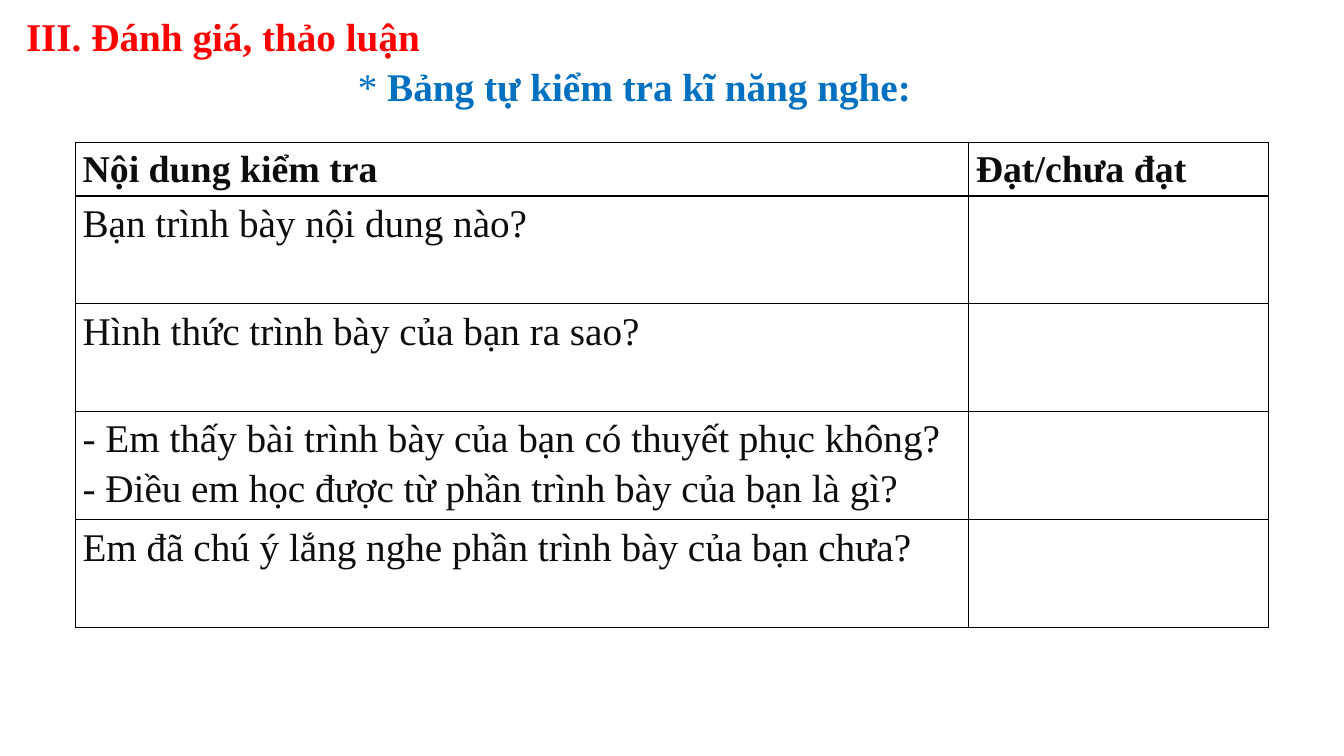
from lxml.etree import SubElement as Sub
from pptx import Presentation
from pptx.dml.color import RGBColor as Rgb
from pptx.enum.text import MSO_AUTO_SIZE as Auto, PP_ALIGN as Align
from pptx.oxml.ns import qn
from pptx.util import Pt

RED = Rgb(0xFF, 0x00, 0x00)
BLUE = Rgb(0x00, 0x70, 0xC0)
INK = Rgb(0x0D, 0x0D, 0x0D)
BLACK = Rgb(0x00, 0x00, 0x00)
FACE = "Times New Roman"
HEADS = ["Nội dung kiểm tra", "Đạt/chưa đạt"]
CHECKS = [
    ["Bạn trình bày nội dung nào?"],
    ["Hình thức trình bày của bạn ra sao?"],
    ["- Em thấy bài trình bày của bạn có thuyết phục không?",
     "- Điều em học được từ phần trình bày của bạn là gì?"],
    ["Em đã chú ý lắng nghe phần trình bày của bạn chưa?"],
]


def style(para, size, color, bold):
    """Set the font and line spacing of a paragraph."""
    para.line_spacing = 1.15
    font = para.font
    font.name, font.size, font.bold = FACE, Pt(size), bold
    font.color.rgb = color


def title(slide, box, parts, color):
    """Place a heading made of (text, bold) parts in the box."""
    frame = slide.shapes.add_textbox(*map(Pt, box)).text_frame
    frame.word_wrap = False
    frame.auto_size = Auto.SHAPE_TO_FIT_TEXT
    para = frame.paragraphs[0]
    style(para, 28, color, True)
    for text, bold in parts:
        run = para.add_run()
        run.text = text
        if not bold:
            run.font.bold = False


def frame_cell(cell):
    """Give a cell thin black borders, no fill and narrow margins."""
    cell.margin_left = cell.margin_right = Pt(5)
    cell.margin_top = cell.margin_bottom = 0
    props = cell._tc.get_or_add_tcPr()
    for side in ("lnL", "lnR", "lnT", "lnB"):
        line = Sub(props, qn("a:" + side), w=str(Pt(1)))
        Sub(Sub(line, qn("a:solidFill")), qn("a:srgbClr"), val=str(BLACK))
    cell.fill.background()


def write(cell, lines, size, bold, align):
    """Write one paragraph per line in a cell."""
    cell.text_frame.text = "\n".join(lines)
    for para in cell.text_frame.paragraphs:
        para.alignment = align
        style(para, size, INK, bold)


def checks(slide, box):
    """Build the checklist table in the box."""
    left, top, width, height = box
    grid = slide.shapes.add_table(len(CHECKS) + 1, 2, *map(Pt, box)).table
    grid.horz_banding = grid.first_row = False
    grid.columns[0].width = Pt(638)
    grid.columns[1].width = Pt(width - 638)
    head = 38
    for row in grid.rows:
        row.height = Pt((height - head) / len(CHECKS))
    grid.rows[0].height = Pt(head)
    for cell in grid.iter_cells():
        frame_cell(cell)
    for col, text in enumerate(HEADS):
        write(grid.cell(0, col), [text], 27, True, Align.LEFT)
    for row, lines in enumerate(CHECKS, 1):
        write(grid.cell(row, 0), lines, 28, False, Align.JUSTIFY)


def main():
    """Build and save the slide."""
    deck = Presentation()
    deck.slide_width, deck.slide_height = Pt(960), Pt(540)
    slide = deck.slides.add_slide(deck.slide_layouts[6])
    title(slide, (11.5, 0, 306, 46), [("III. Đánh giá, thảo luận", True)], RED)
    title(slide, (248.5, 36, 414, 46),
          [("* ", False), ("Bảng tự kiểm tra kĩ năng nghe:", True)], BLUE)
    checks(slide, (54, 102, 852, 346))
    deck.save("out.pptx")


if __name__ == "__main__":
    main()
